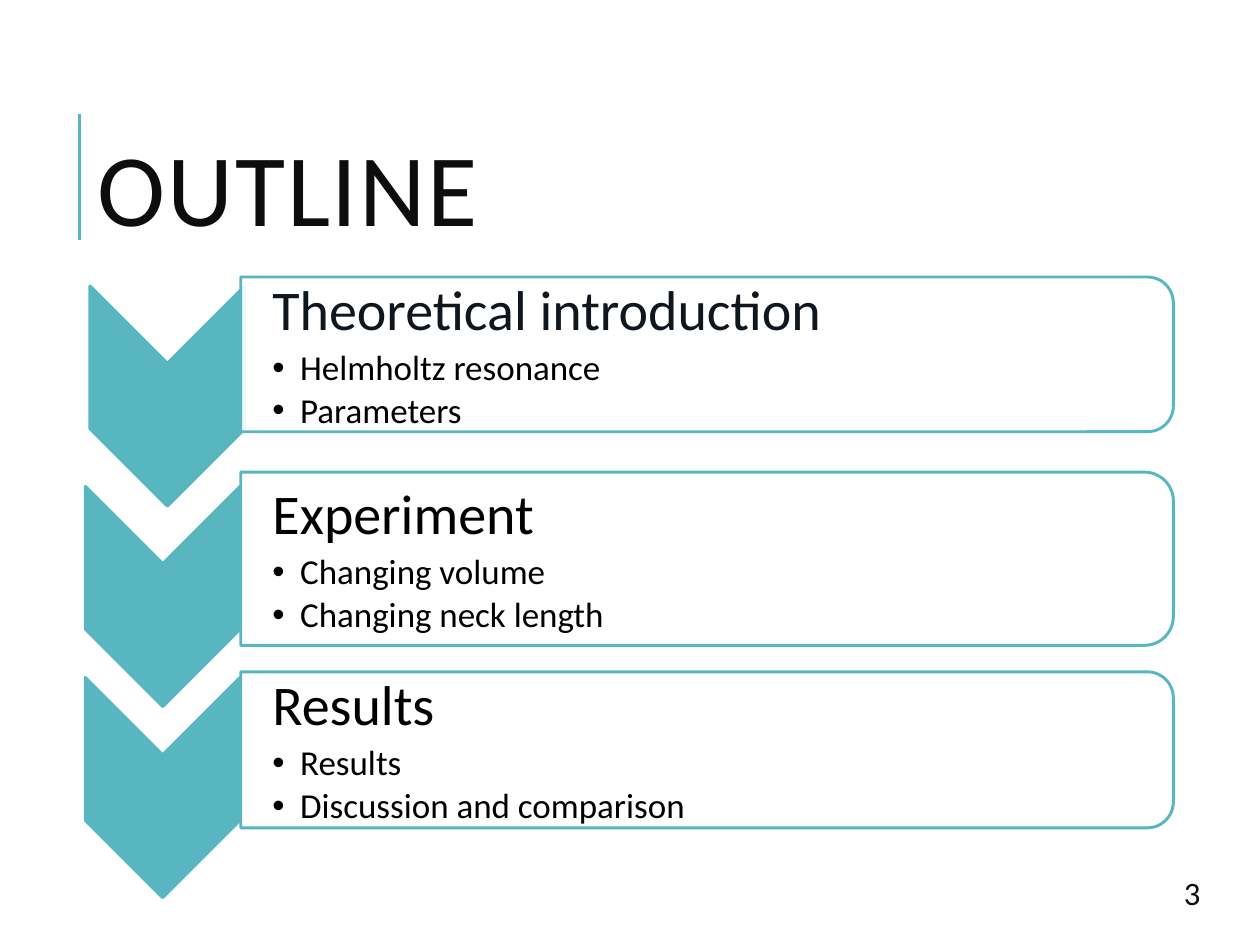
from pptx import Presentation
from pptx.dml.color import RGBColor
from pptx.enum.shapes import MSO_CONNECTOR, MSO_SHAPE
from pptx.enum.text import MSO_ANCHOR
from pptx.oxml.ns import qn
from pptx.util import Cm, Pt
from lxml import etree

CHEVRON = MSO_SHAPE.CHEVRON
ROUNDED = MSO_SHAPE.ROUND_2_SAME_RECTANGLE
STRAIGHT = MSO_CONNECTOR.STRAIGHT
TOP, MIDDLE = MSO_ANCHOR.TOP, MSO_ANCHOR.MIDDLE
TEAL, WHITE, BLACK, INK = "58B6C0", "FFFFFF", "000000", "0D0D0D"

prs = Presentation()
prs.slide_width, prs.slide_height = Cm(19.05), Cm(14.29)
s = prs.slides.add_slide(prs.slide_layouts[6])


def add_text(left, top, width, height, lines, inset=(0.25, 0.25), anchor=TOP,
             spacing=1.0, after=0.0, tracking=0):
    """Lines are (text, size, colour, bulleted); inset is left and other sides."""
    tf = s.shapes.add_textbox(Cm(left), Cm(top), Cm(width), Cm(height)).text_frame
    tf.word_wrap, tf.vertical_anchor = True, anchor
    tf.margin_left = Cm(inset[0])
    tf.margin_top = tf.margin_right = tf.margin_bottom = Cm(inset[1])
    for i, (text, size, color, bulleted) in enumerate(lines):
        p = tf.add_paragraph() if i else tf.paragraphs[0]
        p.line_spacing, p.space_after = spacing, Pt(size * after)
        r = p.add_run()
        r.text = text
        r.font.name, r.font.size = "Calibri", Pt(size)
        r.font.color.rgb = RGBColor.from_string(color)
        if tracking:
            r.font._element.set("spc", str(tracking))
        if bulleted:
            pPr = p._p.get_or_add_pPr()
            pPr.set("marL", str(Cm(0.3)))
            pPr.set("indent", str(-Cm(0.3)))
            etree.SubElement(pPr, qn("a:buFont")).set("typeface", "Arial")
            etree.SubElement(pPr, qn("a:buChar")).set("char", "•")


def add_turned(kind, cx, cy, width, height, fill):
    """Add a shape turned by 90 degrees about its centre."""
    sp = s.shapes.add_shape(kind, Cm(cx - width / 2), Cm(cy - height / 2),
                            Cm(width), Cm(height))
    sp.rotation = 90
    sp.shadow.inherit = False
    sp.fill.solid()
    sp.fill.fore_color.rgb = RGBColor.from_string(fill)
    sp.line.color.rgb = RGBColor.from_string(TEAL)
    sp.line.width = Pt(1.25)
    return sp


# Title with its rule
rule = s.shapes.add_connector(STRAIGHT, Cm(1.2), Cm(3.63), Cm(1.2), Cm(1.73))
rule.line.color.rgb = RGBColor.from_string(TEAL)
rule.line.width = Pt(1.5)
etree.SubElement(rule._element.spPr, qn("a:effectLst"))
add_text(1.3, 2.05, 17.75, 1.19, [("OUTLINE", 44, INK, False)],
         inset=(0.18, 0.18), spacing=0.8, tracking=80)

# Sections: chevron centre, box centre and height, heading colour, wording
sections = [
    (2.53, 5.99, 5.36, 2.34, "0F161D", "Theoretical introduction",
     ["Helmholtz resonance", "Parameters"]),
    (2.46, 9.02, 8.45, 2.62, BLACK, "Experiment",
     ["Changing volume", "Changing neck length"]),
    (2.46, 11.91, 11.34, 2.36, BLACK, "Results",
     ["Results", "Discussion and comparison"]),
]
for chevron_x, chevron_y, box_y, box_h, color, heading, points in sections:
    add_turned(CHEVRON, chevron_x, chevron_y, 3.33, 2.34, TEAL)
    box = add_turned(ROUNDED, 10.69, box_y, box_h, 14.1, WHITE)
    white = box._element.spPr.find(qn("a:solidFill"))[0]
    etree.SubElement(white, qn("a:alpha")).set("val", "90000")
    text_h = box_h - 0.24
    add_text(3.64, box_y + 0.03 - text_h / 2, 13.98, text_h,
             [(heading, 24, color, False)]
             + [(" " + point, 15, BLACK, True) for point in points],
             inset=(0.48, 0.05), anchor=MIDDLE, spacing=0.9, after=0.14)

# Slide number
add_text(17.65, 12.95, 1.14, 1.09, [("3", 14, INK, False)], anchor=MIDDLE)

prs.save("out.pptx")
